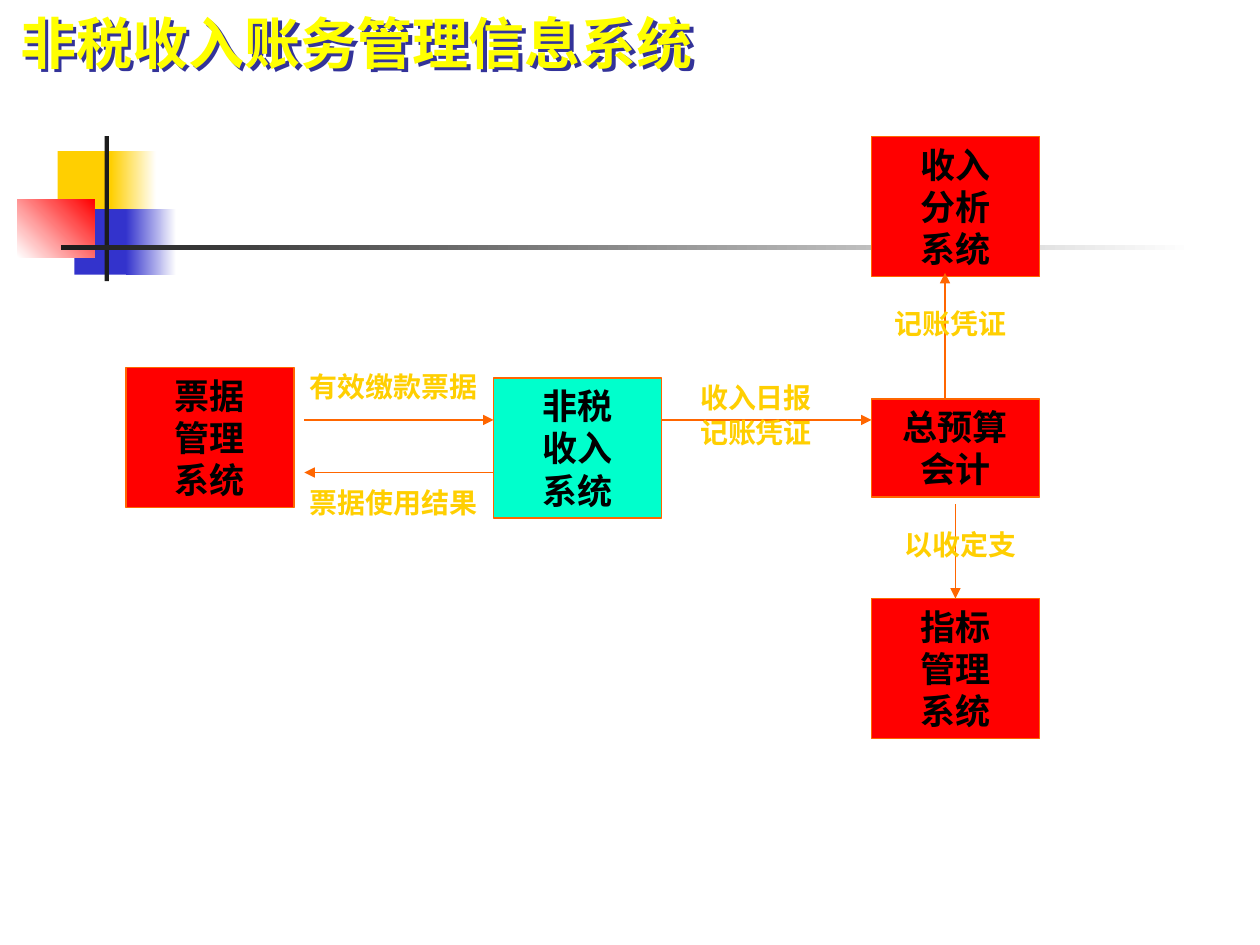
"""Build the slide on the non-tax income accounting system."""
import pptx
import pptx.util
import pptx.dml.color
import pptx.enum.shapes
import pptx.enum.text
import pptx.oxml
import pptx.oxml.ns

Pt = pptx.util.Pt
RGB = pptx.dml.color.RGBColor
Kind = pptx.enum.shapes.MSO_SHAPE
Align = pptx.enum.text.PP_ALIGN
Anchor = pptx.enum.text.MSO_ANCHOR

GOLD = RGB(0xFF, 0xCF, 0x01)
BLUE = RGB(0x33, 0x33, 0xCC)
RED = RGB(0xFF, 0x00, 0x00)
AQUA = RGB(0x00, 0xFF, 0xCC)
ORANGE = RGB(0xFF, 0x66, 0x00)
YELLOW = RGB(0xFF, 0xFF, 0x00)
BLACK = RGB(0x00, 0x00, 0x00)
DARK = RGB(0x1C, 0x1C, 0x1C)
WHITE = RGB(0xFF, 0xFF, 0xFF)
FONT = "Noto Sans CJK SC"
SPACE = 'xmlns:a="http://schemas.openxmlformats.org/drawingml/2006/main"'


def add_xml(node, text):
    node.append(pptx.oxml.parse_xml(text.replace(" ", f" {SPACE} ", 1)))


def write(frame, lines, look, form):
    frame.word_wrap = True
    frame.text = "\n".join(lines)
    for para in frame.paragraphs:
        for key, value in form.items():
            setattr(para, key, value)
        run = para.runs[0]
        for key, value in look.items():
            if key == "color":
                run.font.color.rgb = value
            else:
                setattr(run.font, key, value)
        add_xml(run.font._element, f'<a:ea typeface="{FONT}"/>')


deck = pptx.Presentation()
deck.slide_width, deck.slide_height = Pt(720), Pt(540)
slide = deck.slides.add_slide(deck.slide_layouts[5])
shapes = slide.shapes

decor = [
    (33, 86.4, 34.6, 37.4, GOLD, None, 0),
    (63.4, 86.4, 25.9, 37.4, GOLD, WHITE, 0),
    (42.5, 119.5, 33.1, 37.4, BLUE, None, 0),
    (72, 119.5, 28.8, 37.4, BLUE, WHITE, 0),
    (10, 113.8, 44, 33.1, WHITE, RED, 45),
    (59.8, 77.8, 2.5, 82.8, DARK, None, 0),
    (34.6, 140.2, 648, 2.4, DARK, WHITE, 0),
]
for left, top, width, height, start, end, angle in decor:
    block = shapes.add_shape(Kind.RECTANGLE, Pt(left), Pt(top), Pt(width), Pt(height))
    block.shadow.inherit = False
    block.line.fill.background()
    if end is None:
        block.fill.solid()
        block.fill.fore_color.rgb = start
    else:
        block.fill.gradient()
        block.fill.gradient_angle = angle
        for stop, color in zip(block.fill.gradient_stops, (start, end)):
            stop.color.rgb = color

title = shapes.title
place = {"left": Pt(4.5), "top": Pt(0), "width": Pt(584), "height": Pt(48)}
for key, value in place.items():
    setattr(title, key, value)
title.text_frame.vertical_anchor = Anchor.MIDDLE
look = {"name": "Times New Roman", "size": Pt(32), "bold": True, "color": YELLOW}
write(title.text_frame, ["非税收入账务管理信息系统"], look, {"alignment": Align.LEFT})
add_xml(
    title._element.spPr,
    '<a:effectLst ><a:outerShdw dist="35900" dir="2700000" algn="ctr" rotWithShape="0">'
    '<a:srgbClr val="333399"/></a:outerShdw></a:effectLst>',
)

boxes = [
    (282, 216, 80, AQUA, ["非税", "收入", "系统"]),
    (72, 210, 80, RED, ["票据", "管理", "系统"]),
    (498, 342, 80, RED, ["指标", "管理", "系统"]),
    (498, 228, 56, RED, ["总预算", "会计"]),
    (498, 78, 80, RED, ["收入", "分析", "系统"]),
]
look = {"name": FONT, "size": Pt(20), "bold": True, "color": BLACK}
form = {"alignment": Align.CENTER, "line_spacing": Pt(24)}
for left, top, height, color, lines in boxes:
    box = shapes.add_shape(Kind.RECTANGLE, Pt(left), Pt(top), Pt(96), Pt(height))
    box.shadow.inherit = False
    box.fill.solid()
    box.fill.fore_color.rgb = color
    box.line.color.rgb = ORANGE
    box.line.width = Pt(1)
    box.text_frame.vertical_anchor = Anchor.MIDDLE
    write(box.text_frame, lines, look, form)

arrows = [
    (282, 270, 174, 270),
    (174, 240, 282, 240),
    (546, 288, 546, 342),
    (378, 240, 498, 240),
    (540, 228, 540, 156),
]
for ends in arrows:
    arrow = shapes.add_connector(
        pptx.enum.shapes.MSO_CONNECTOR.STRAIGHT, *[Pt(end) for end in ends]
    )
    arrow.line.color.rgb = ORANGE
    arrow.line.width = Pt(1)
    add_xml(arrow.line._get_or_add_ln(), '<a:tailEnd type="triangle"/>')
    add_xml(arrow._element.spPr, "<a:effectLst />")

labels = [
    (168, 276, 114, 24, ["票据使用结果"]),
    (168, 210, 114, 24, ["有效缴款票据"]),
    (492, 300, 114, 24, ["以收定支"]),
    (384, 216, 96, 42, ["收入日报", "记账凭证"]),
    (486, 174, 114, 24, ["记账凭证"]),
]
look = {"name": FONT, "size": Pt(16), "bold": True, "color": GOLD}
form = {"alignment": Align.CENTER, "line_spacing": Pt(17), "space_before": Pt(3.2)}
for left, top, width, height, lines in labels:
    label = shapes.add_textbox(Pt(left), Pt(top), Pt(width), Pt(height))
    write(label.text_frame, lines, look, form)

deck.save("out.pptx")
